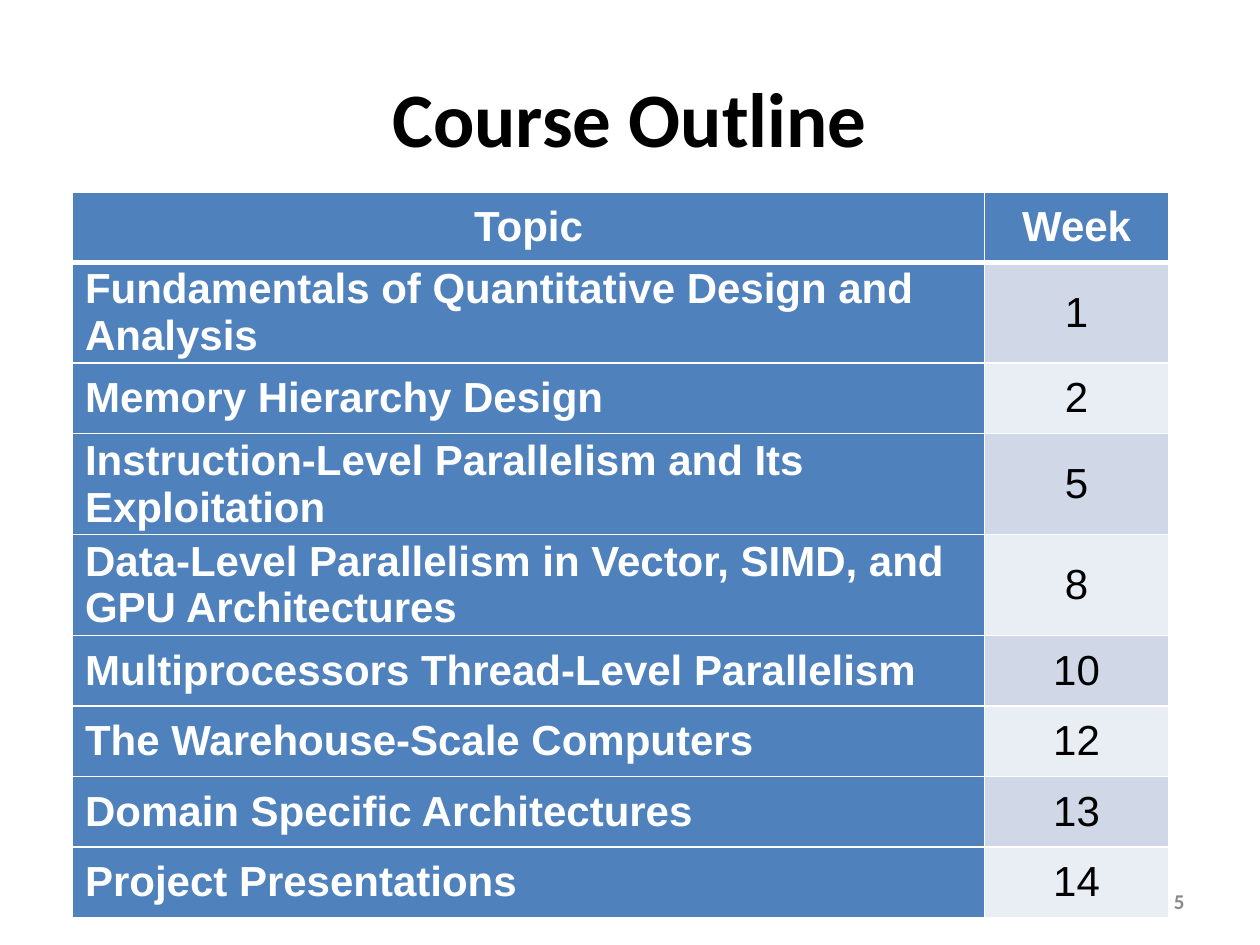
import pptx
import pptx.dml.color
import pptx.enum.text
import pptx.oxml
import pptx.oxml.ns
import pptx.util

Pt = pptx.util.Pt
RGBColor = pptx.dml.color.RGBColor
Align = pptx.enum.text.PP_ALIGN
Anchor = pptx.enum.text.MSO_ANCHOR

WHITE = RGBColor(0xFF, 0xFF, 0xFF)
BLACK = RGBColor(0x00, 0x00, 0x00)
GRAY = RGBColor(0x89, 0x89, 0x89)
BLUE = RGBColor(0x4F, 0x81, 0xBD)
BAND_DARK = RGBColor(0xD0, 0xD8, 0xE8)
BAND_LIGHT = RGBColor(0xE9, 0xED, 0xF4)

TOPICS = [
    ("Fundamentals of Quantitative Design and Analysis", "1"),
    ("Memory Hierarchy Design", "2"),
    ("Instruction-Level Parallelism and Its Exploitation", "5"),
    ("Data-Level Parallelism in Vector, SIMD, and GPU Architectures", "8"),
    ("Multiprocessors Thread-Level Parallelism", "10"),
    ("The Warehouse-Scale Computers", "12"),
    ("Domain Specific Architectures", "13"),
    ("Project Presentations", "14"),
]


class OutlineSlide:
    heading_font = "Calibri"
    table_font = "Arial"
    table_size = 24

    def __init__(self, presentation):
        self.slide = presentation.slides.add_slide(presentation.slide_layouts[6])

    def add_text_run(self, paragraph, text, font, size, color, bold, align):
        paragraph.alignment = align
        run = paragraph.add_run()
        run.text = text
        run.font.name = font
        run.font.size = Pt(size)
        run.font.bold = bold
        run.font.color.rgb = color

    def text(self, left, top, width, height, text, size, color, align):
        shape = self.slide.shapes.add_textbox(Pt(left), Pt(top), Pt(width), Pt(height))
        frame = shape.text_frame
        frame.word_wrap = True
        frame.vertical_anchor = Anchor.MIDDLE
        self.add_text_run(frame.paragraphs[0], text, self.heading_font, size, color, True, align)

    def table(self, left, top, widths, row_height, row_count):
        shape = self.slide.shapes.add_table(
            row_count, len(widths), Pt(left), Pt(top),
            Pt(sum(widths)), Pt(row_height * row_count))
        table = shape.table
        table.horz_banding = False
        for column, width in zip(table.columns, widths):
            column.width = Pt(width)
        for row in table.rows:
            row.height = Pt(row_height)
        return table

    def borders(self, cell, top, bottom):
        properties = cell._tc.get_or_add_tcPr()
        namespace = pptx.oxml.ns.nsdecls("a")
        for side, width in (("L", 1), ("R", 1), ("T", top), ("B", bottom)):
            properties.append(pptx.oxml.parse_xml(
                f'<a:ln{side} {namespace} w="{Pt(width)}"><a:solidFill>'
                f'<a:srgbClr val="{WHITE}"/></a:solidFill></a:ln{side}>'))

    def cell(self, cell, text, fill, color, bold, align, indent=0, top=1, bottom=1):
        self.borders(cell, top, bottom)
        cell.fill.solid()
        cell.fill.fore_color.rgb = fill
        cell.vertical_anchor = Anchor.MIDDLE
        cell.margin_left = cell.margin_right = cell.margin_top = cell.margin_bottom = 0
        paragraph = cell.text_frame.paragraphs[0]
        if indent:
            paragraph._p.get_or_add_pPr().set("marL", str(Pt(indent)))
        self.add_text_run(paragraph, text, self.table_font, self.table_size, color, bold, align)


def main():
    presentation = pptx.Presentation()
    presentation.slide_width = Pt(720)
    presentation.slide_height = Pt(540)
    outline = OutlineSlide(presentation)

    outline.text(36, 21.6, 648, 90, "Course Outline", 44, BLACK, Align.CENTER)

    table = outline.table(41.4, 109.6, (521.3, 105), 40.3, len(TOPICS) + 1)
    for column, heading in enumerate(("Topic", "Week")):
        outline.cell(table.cell(0, column), heading, BLUE, WHITE, True, Align.CENTER, bottom=3)
    for row, (topic, week) in enumerate(TOPICS, start=1):
        top = 3 if row == 1 else 1
        band = BAND_DARK if row % 2 else BAND_LIGHT
        outline.cell(table.cell(row, 0), topic, BLUE, WHITE, True, Align.LEFT, indent=7.2, top=top)
        outline.cell(table.cell(row, 1), week, band, BLACK, False, Align.CENTER, top=top)

    outline.text(516, 500.5, 168, 28.8, "5", 12, GRAY, Align.RIGHT)
    presentation.save("out.pptx")


if __name__ == "__main__":
    main()
